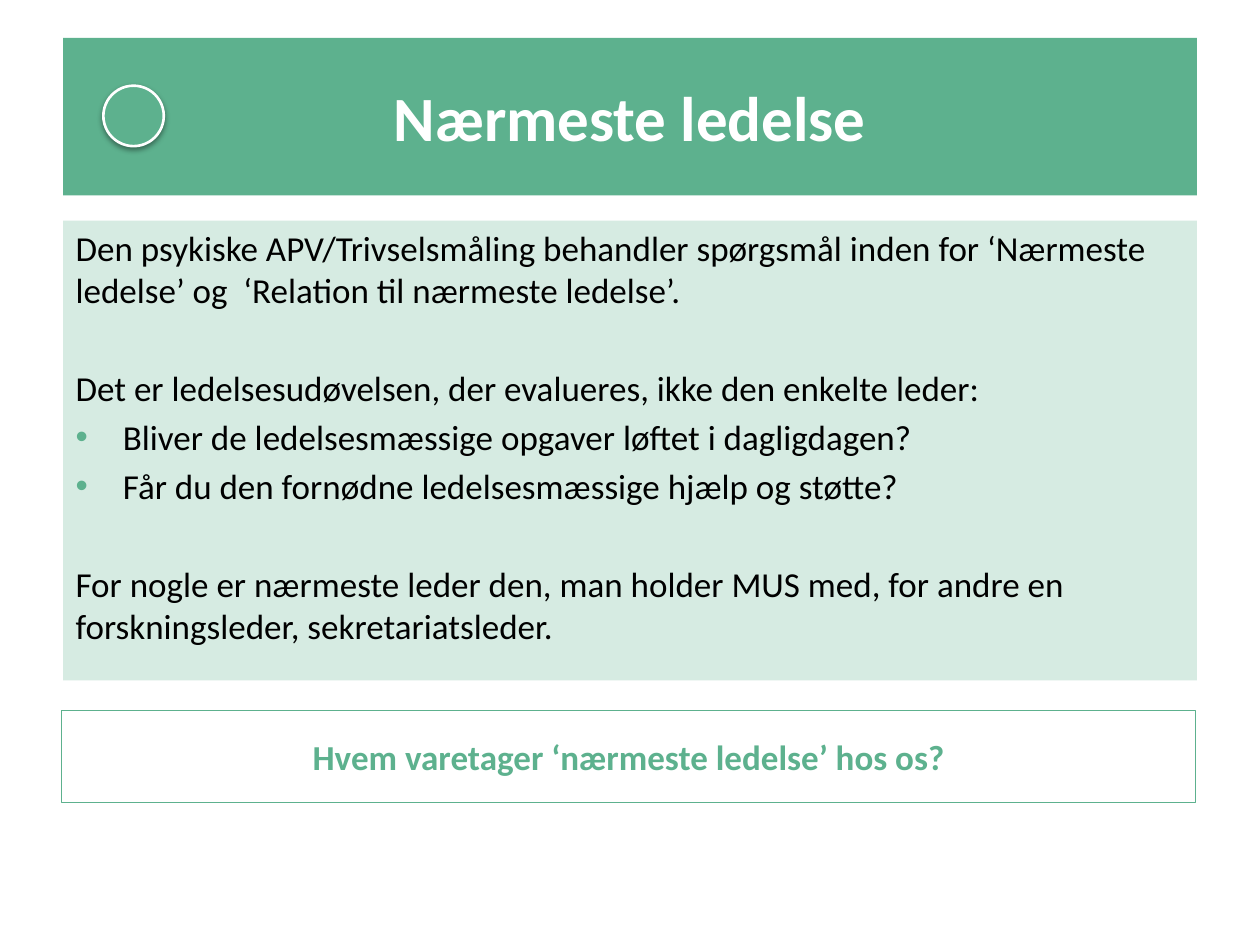
import pptx
import pptx.dml.color
import pptx.enum.shapes
import pptx.enum.text
import pptx.oxml
import pptx.oxml.ns
import pptx.util
from lxml import etree

Pt = pptx.util.Pt
RGBColor = pptx.dml.color.RGBColor
MSO_SHAPE = pptx.enum.shapes.MSO_SHAPE
MSO_ANCHOR = pptx.enum.text.MSO_ANCHOR
PP_ALIGN = pptx.enum.text.PP_ALIGN
qn = pptx.oxml.ns.qn

GREEN = RGBColor(0x5D, 0xB1, 0x8E)
WHITE = RGBColor(0xFF, 0xFF, 0xFF)
BLACK = RGBColor(0x00, 0x00, 0x00)
FONT = "Calibri"
TEXT_SIZE = 20
LINE_GAP = 4
SECTION_GAP = 32
BULLET_INDENT = 27

TITLE = "Nærmeste ledelse"
SECTIONS = [
    ("Den psykiske APV/Trivselsmåling behandler spørgsmål inden for ‘Nærmeste "
     "ledelse’ og  ‘Relation til nærmeste ledelse’.", []),
    ("Det er ledelsesudøvelsen, der evalueres, ikke den enkelte leder:",
     ["Bliver de ledelsesmæssige opgaver løftet i dagligdagen?",
      "Får du den fornødne ledelsesmæssige hjælp og støtte?"]),
    ("For nogle er nærmeste leder den, man holder MUS med, for andre en "
     "forskningsleder, sekretariatsleder.", []),
]
QUESTION = "Hvem varetager ‘nærmeste ledelse’ hos os?"

TITLE_BOX = (36, 21.6, 648, 90)
BODY_BOX = (36, 126, 648, 262.8)
QUESTION_BOX = (35.28, 406.08, 648, 52.56)
CIRCLE_BOX = (59.04, 48.96, 34.56, 34.56)


def place(shape, box):
    shape.left, shape.top, shape.width, shape.height = map(Pt, box)


def fill_solid(shape, color):
    shape.fill.solid()
    shape.fill.fore_color.rgb = color


def set_alpha(color_element, percent):
    etree.SubElement(color_element, qn("a:alpha"), val=str(percent * 1000))


def set_bullet(paragraph, bulleted):
    properties = paragraph._p.get_or_add_pPr()
    indent = Pt(BULLET_INDENT) if bulleted else 0
    properties.set("marL", str(indent))
    properties.set("indent", str(-indent))
    if bulleted:
        bullet_color = etree.SubElement(properties, qn("a:buClr"))
        etree.SubElement(bullet_color, qn("a:srgbClr"), val=str(GREEN))
        etree.SubElement(properties, qn("a:buFont"), typeface="Arial")
        etree.SubElement(properties, qn("a:buChar"), char="•")
    else:
        etree.SubElement(properties, qn("a:buNone"))


def add_text(paragraph, text, size, color, bold=False):
    run = paragraph.add_run()
    run.text = text
    run.font.name = FONT
    run.font.size = Pt(size)
    run.font.bold = bold
    run.font.color.rgb = color


def add_centred(shape, text, size, color):
    frame = shape.text_frame
    frame.word_wrap = True
    frame.auto_size = pptx.enum.text.MSO_AUTO_SIZE.NONE
    frame.vertical_anchor = MSO_ANCHOR.MIDDLE
    paragraph = frame.paragraphs[0]
    paragraph.alignment = PP_ALIGN.CENTER
    add_text(paragraph, text, size, color, bold=True)


def build_title(slide):
    title = slide.shapes.title
    place(title, TITLE_BOX)
    fill_solid(title, GREEN)
    add_centred(title, TITLE, 36, WHITE)


def build_body(slide):
    body = slide.placeholders[1]
    place(body, BODY_BOX)
    fill_solid(body, GREEN)
    set_alpha(body._element.spPr.find(".//" + qn("a:srgbClr")), 25)
    frame = body.text_frame
    frame.auto_size = pptx.enum.text.MSO_AUTO_SIZE.NONE
    frame.vertical_anchor = MSO_ANCHOR.TOP
    for number, (lead, bullets) in enumerate(SECTIONS):
        for position, text in enumerate([lead] + bullets):
            is_first = number == 0 and position == 0
            paragraph = frame.paragraphs[0] if is_first else frame.add_paragraph()
            set_bullet(paragraph, position > 0)
            gap = LINE_GAP if position else SECTION_GAP
            paragraph.space_before = Pt(0 if is_first else gap)
            add_text(paragraph, text, TEXT_SIZE, BLACK)


def build_question(slide):
    question = slide.shapes.add_shape(MSO_SHAPE.RECTANGLE, *map(Pt, QUESTION_BOX))
    question.shadow.inherit = False
    question.fill.background()
    question.line.color.rgb = GREEN
    question.line.width = Pt(0.75)
    add_centred(question, QUESTION, TEXT_SIZE, GREEN)


def build_circle(slide):
    circle = slide.shapes.add_shape(MSO_SHAPE.OVAL, *map(Pt, CIRCLE_BOX))
    circle.shadow.inherit = False
    fill_solid(circle, GREEN)
    circle.line.color.rgb = WHITE
    circle.line.width = Pt(1.5)
    effects = circle._element.spPr.find(qn("a:effectLst"))
    shadow = etree.SubElement(
        effects, qn("a:outerShdw"), blurRad=str(Pt(3.1)), dist=str(Pt(1.6)),
        dir=str(90 * 60000), rotWithShape="0")
    set_alpha(etree.SubElement(shadow, qn("a:srgbClr"), val=str(BLACK)), 38)


def main():
    presentation = pptx.Presentation()
    presentation.slide_width = Pt(720)
    presentation.slide_height = Pt(540)
    slide = presentation.slides.add_slide(presentation.slide_layouts[1])
    build_title(slide)
    build_body(slide)
    build_question(slide)
    build_circle(slide)
    presentation.save("out.pptx")


if __name__ == "__main__":
    main()
